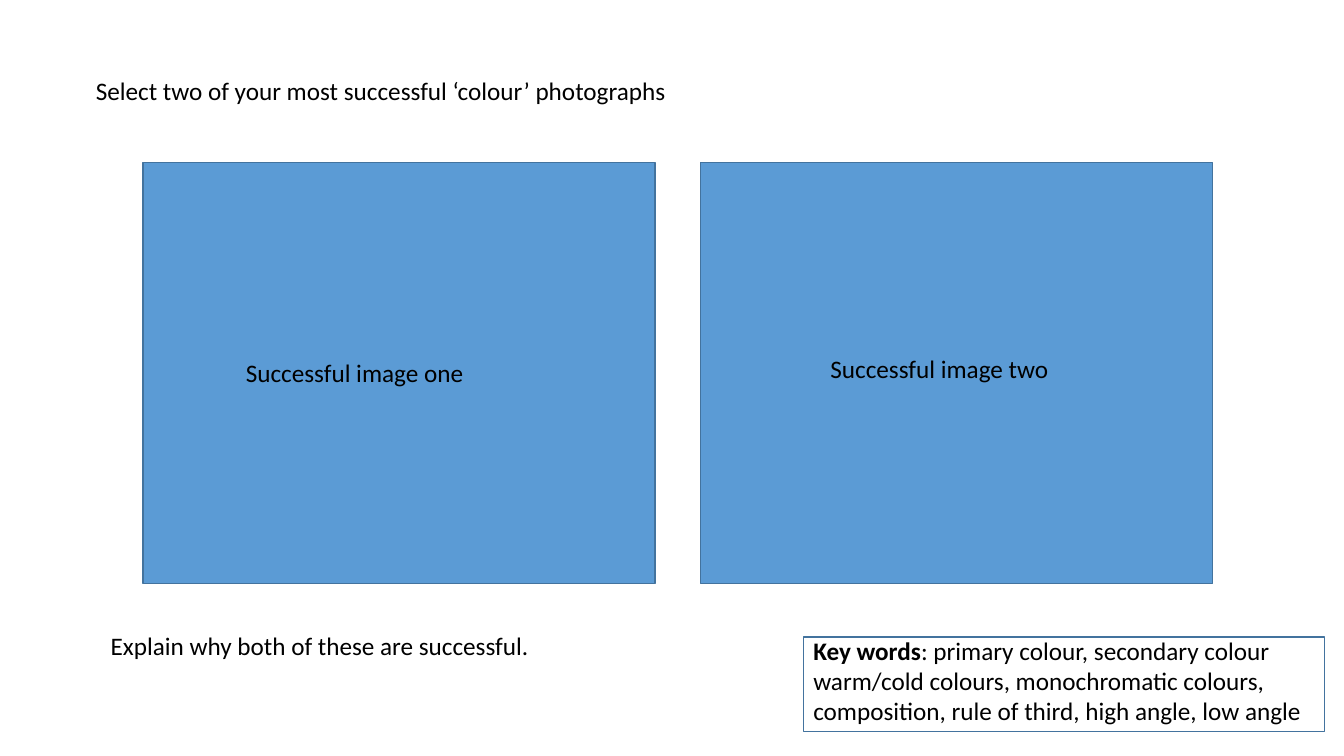
from pptx import Presentation
from pptx.dml.color import RGBColor
from pptx.enum import shapes, text
from pptx.util import Pt

COLORS = {"panel": "5B9BD5", "outline": "43739E", "text": "000000"}
PANEL_LEFT, PANEL_TOP, PANEL_STEP = 102.24, 115.92, 398.16
PANEL_W, PANEL_H = 365.76, 300.96


def color(name):
    """Return the named colour."""
    return RGBColor.from_string(COLORS[name])


def place(s, x, y, w, h):
    """Set the position and size of a shape in points."""
    s.left, s.top, s.width, s.height = Pt(x), Pt(y), Pt(w), Pt(h)


def write(s, *runs):
    """Fill a shape with one paragraph of (text, bold) runs."""
    tf = s.text_frame
    tf.word_wrap = True
    tf.auto_size = text.MSO_AUTO_SIZE.NONE
    tf.vertical_anchor = text.MSO_ANCHOR.TOP
    p = tf.paragraphs[0]
    p.alignment = text.PP_ALIGN.LEFT
    for words, bold in runs:
        r = p.add_run()
        r.text = words
        r.font.name = "Calibri"
        r.font.size = Pt(18)
        r.font.bold = bold
        r.font.color.rgb = color("text")


def add_title(slide, words, x, y, w, h):
    """Write the slide title in its placeholder."""
    s = slide.shapes.title
    place(s, x, y, w, h)
    write(s, (words, False))


def add_text(slide, x, y, w, h, *runs):
    """Add a text box."""
    s = slide.shapes.add_textbox(Pt(x), Pt(y), Pt(w), Pt(h))
    write(s, *runs)


def add_box(slide, x, y, w, h, fill=None):
    """Add an outlined rectangle, filled if a colour is named."""
    s = slide.shapes.add_shape(
        shapes.MSO_SHAPE.RECTANGLE, Pt(x), Pt(y), Pt(w), Pt(h))
    s.shadow.inherit = False
    if fill:
        s.fill.solid()
        s.fill.fore_color.rgb = color(fill)
    else:
        s.fill.background()
    s.line.color.rgb = color("outline")
    s.line.width = Pt(1)


def main():
    """Build and save the slide."""
    prs = Presentation()
    prs.slide_width, prs.slide_height = Pt(960), Pt(540)
    slide = prs.slides.add_slide(prs.slide_layouts[5])

    add_title(slide, "Select two of your most successful ‘colour’ photographs",
              61.2, 50.4, 650.16, 28.8)
    for i in range(2):
        add_box(slide, PANEL_LEFT + i * PANEL_STEP, PANEL_TOP,
                PANEL_W, PANEL_H, "panel")
    add_text(slide, 168.48, 252, 257.76, 28.8, ("Successful image one", False))
    add_text(slide, 586.08, 249.12, 280.8, 28.8, ("Successful image two", False))
    add_text(slide, 72, 446.4, 407.52, 28.8,
             ("Explain why both of these are successful.", False))
    add_text(slide, 573.84, 450, 421.92, 72.72,
             ("Key words", True),
             (": primary colour, secondary colour warm/cold colours, "
              "monochromatic colours, composition, rule of third, "
              "high angle, low angle", False))
    add_box(slide, 573.84, 455.04, 372.24, 67.68)
    prs.save("out.pptx")


if __name__ == "__main__":
    main()
